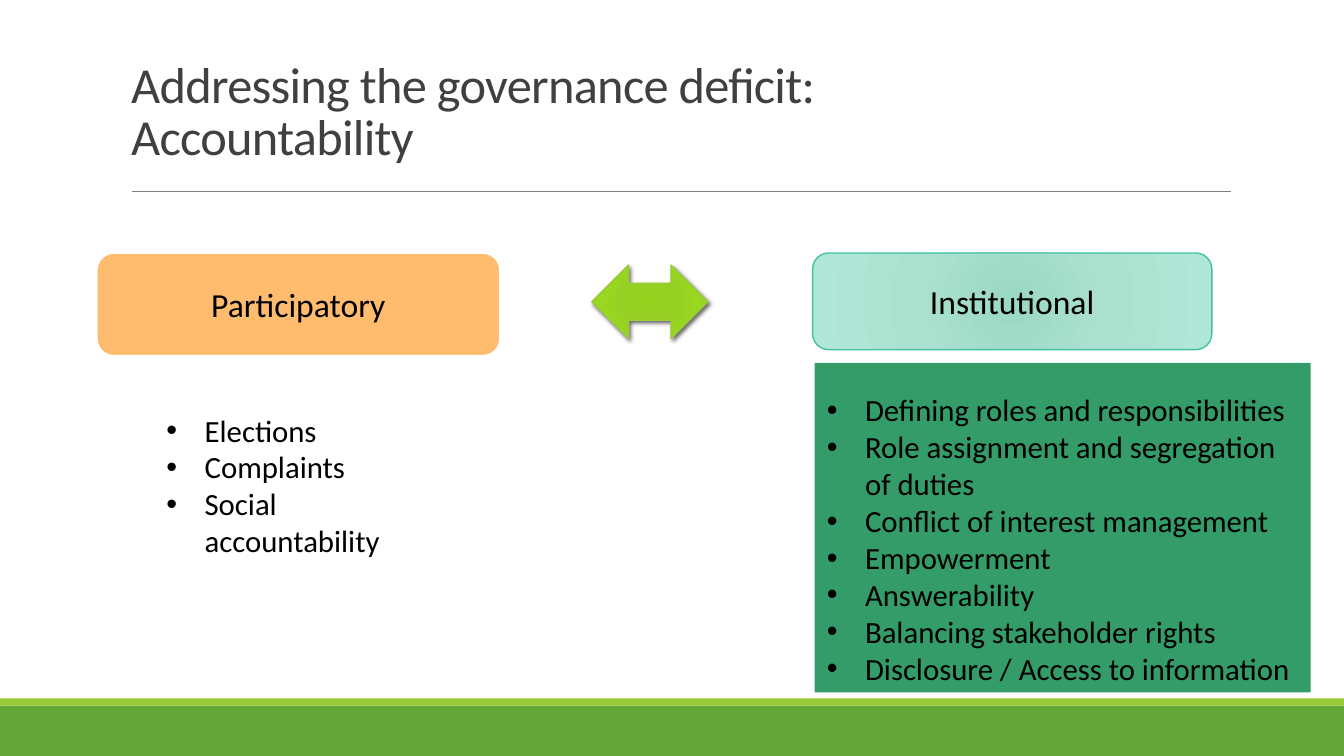
from dataclasses import dataclass

from lxml import etree
from pptx import Presentation
from pptx.dml.color import RGBColor
from pptx.enum.shapes import MSO_CONNECTOR, MSO_SHAPE
from pptx.enum.text import MSO_ANCHOR, MSO_AUTO_SIZE, PP_ALIGN
from pptx.oxml import parse_xml
from pptx.oxml.ns import nsdecls, qn
from pptx.util import Emu, Pt

RECT, ROUND, ARROW = MSO_SHAPE.RECTANGLE, MSO_SHAPE.ROUNDED_RECTANGLE, MSO_SHAPE.LEFT_RIGHT_ARROW
LINE = MSO_CONNECTOR.STRAIGHT
TOP, MID, LOW = MSO_ANCHOR.TOP, MSO_ANCHOR.MIDDLE, MSO_ANCHOR.BOTTOM
LEFT, MIDST = PP_ALIGN.LEFT, PP_ALIGN.CENTER
FIXED = MSO_AUTO_SIZE.NONE


@dataclass(frozen=True)
class Theme:
    font: str = "Calibri"
    head: int = 36
    label: int = 24
    body: int = 22
    ink: str = "000000"
    title: str = "404040"
    rule: str = "808080"
    base: str = "63A537"
    lime: str = "99CB38"
    panel: str = "339C68"
    peach: str = "FFBC6F"
    white: str = "FFFFFF"
    teal: str = "44C1A3"
    mint: tuple = ((0, "9AD9C5"), (45, "ABE0CF"), (100, "B1E7D6"))
    leaf: tuple = ((0, "95D220"), (34, "96D023"), (70, "99D720"), (100, "9BD231"))


LOOK = Theme()
WIDE, HIGH, SCALE = 1333, 750, 9144

TITLE = "Addressing the governance deficit:\vAccountability"
TITLE_BOX = (120, 10, 1100, 159)
RULE = (131, 190, 1221, 190)
BACK = [
    ((0, 700, WIDE, 50), LOOK.base),
    ((0, 693, WIDE, 7), LOOK.lime),
    ((808, 360, 492, 327), LOOK.panel),
]
LABELS = [
    ("Institutional", (806, 251, 396, 96), LOOK.mint, LOOK.teal, 1),
    ("Participatory", (96, 251, 400, 102), LOOK.peach, LOOK.white, 1.25),
]
ARROW_BOX = (587, 263, 115, 73)
LISTS = [
    ((155, 403, 297, 158), ["Elections", "Complaints", "Social accountability"]),
    ((810, 383, 490, 343), [
        "Defining roles and responsibilities",
        "Role assignment and segregation of duties",
        "Conflict of interest management",
        "Empowerment",
        "Answerability",
        "Balancing stakeholder rights",
        "Disclosure / Access to information",
    ]),
]
INDENT = 38


def px(num):
    return Emu(num * SCALE)


def place(item, box):
    item.left, item.top, item.width, item.height = map(px, box)


def radial(shape, stops):
    marks = "".join(
        f'<a:gs pos="{pos * 1000}"><a:srgbClr val="{tint}"/></a:gs>' for pos, tint in stops
    )
    grad = parse_xml(
        f'<a:gradFill {nsdecls("a")} rotWithShape="1"><a:gsLst>{marks}</a:gsLst>'
        '<a:path path="circle"><a:fillToRect l="100000" t="100000" r="100000" b="100000"/>'
        '</a:path></a:gradFill>'
    )
    shape.element.spPr.find(qn("a:prstGeom")).addnext(grad)


def draw(slide, kind, box, fill, edge=None, width=1):
    shape = slide.shapes.add_shape(kind, *map(px, box))
    shape.shadow.inherit = False
    if isinstance(fill, tuple):
        radial(shape, fill)
    else:
        shape.fill.solid()
        shape.fill.fore_color.rgb = RGBColor.from_string(fill)
    if edge:
        shape.line.color.rgb = RGBColor.from_string(edge)
        shape.line.width = Pt(width)
    else:
        shape.line.fill.background()
    return shape


def style(shape, size, tint, align, anchor):
    frame = shape.text_frame
    frame.word_wrap = True
    frame.auto_size = FIXED
    frame.vertical_anchor = anchor
    for para in frame.paragraphs:
        para.alignment = align
        para.space_before = Pt(0)
        for run in para.runs:
            run.font.name = LOOK.font
            run.font.size = Pt(size)
            run.font.color.rgb = RGBColor.from_string(tint)


def shade(shape):
    glow = parse_xml(
        f'<a:outerShdw {nsdecls("a")} blurRad="{Pt(3)}" dist="{Pt(2)}" dir="2700000" '
        f'rotWithShape="0"><a:srgbClr val="{LOOK.ink}"><a:alpha val="60000"/>'
        '</a:srgbClr></a:outerShdw>'
    )
    shape.element.spPr.find(qn("a:effectLst")).append(glow)


def add_title(slide):
    title = slide.shapes.title
    place(title, TITLE_BOX)
    title.text_frame.text = TITLE
    style(title, LOOK.head, LOOK.title, LEFT, LOW)
    title.text_frame.paragraphs[0].line_spacing = 0.85
    for props in title.element.iter(qn("a:rPr")):
        props.set("spc", "-50")


def add_back(slide):
    title = slide.shapes.title
    for box, tint in BACK:
        title.element.addprevious(draw(slide, RECT, box, tint).element)
    rule = slide.shapes.add_connector(LINE, *map(px, RULE))
    rule.line.color.rgb = RGBColor.from_string(LOOK.rule)
    rule.line.width = Pt(0.5)
    etree.SubElement(rule.element.spPr, qn("a:effectLst"))
    title.element.addprevious(rule.element)


def add_list(shape, box, items):
    place(shape, box)
    shape.text_frame.text = "\n".join(items)
    style(shape, LOOK.body, LOOK.ink, LEFT, TOP)
    for props in shape.element.iter(qn("a:pPr")):
        props.set("marL", str(px(INDENT)))
        props.set("indent", str(px(-INDENT)))
        etree.SubElement(props, qn("a:buFont")).set("typeface", "Arial")
        etree.SubElement(props, qn("a:buChar")).set("char", "•")


def main():
    deck = Presentation()
    deck.slide_width, deck.slide_height = px(WIDE), px(HIGH)
    slide = deck.slides.add_slide(deck.slide_layouts[3])
    add_title(slide)
    add_back(slide)
    for text, box, fill, edge, width in LABELS:
        label = draw(slide, ROUND, box, fill, edge, width)
        label.text_frame.text = text
        style(label, LOOK.label, LOOK.ink, MIDST, MID)
    shade(draw(slide, ARROW, ARROW_BOX, LOOK.leaf, LOOK.lime))
    for spot, (box, items) in enumerate(LISTS, 1):
        add_list(slide.placeholders[spot], box, items)
    deck.save("out.pptx")


if __name__ == "__main__":
    main()
